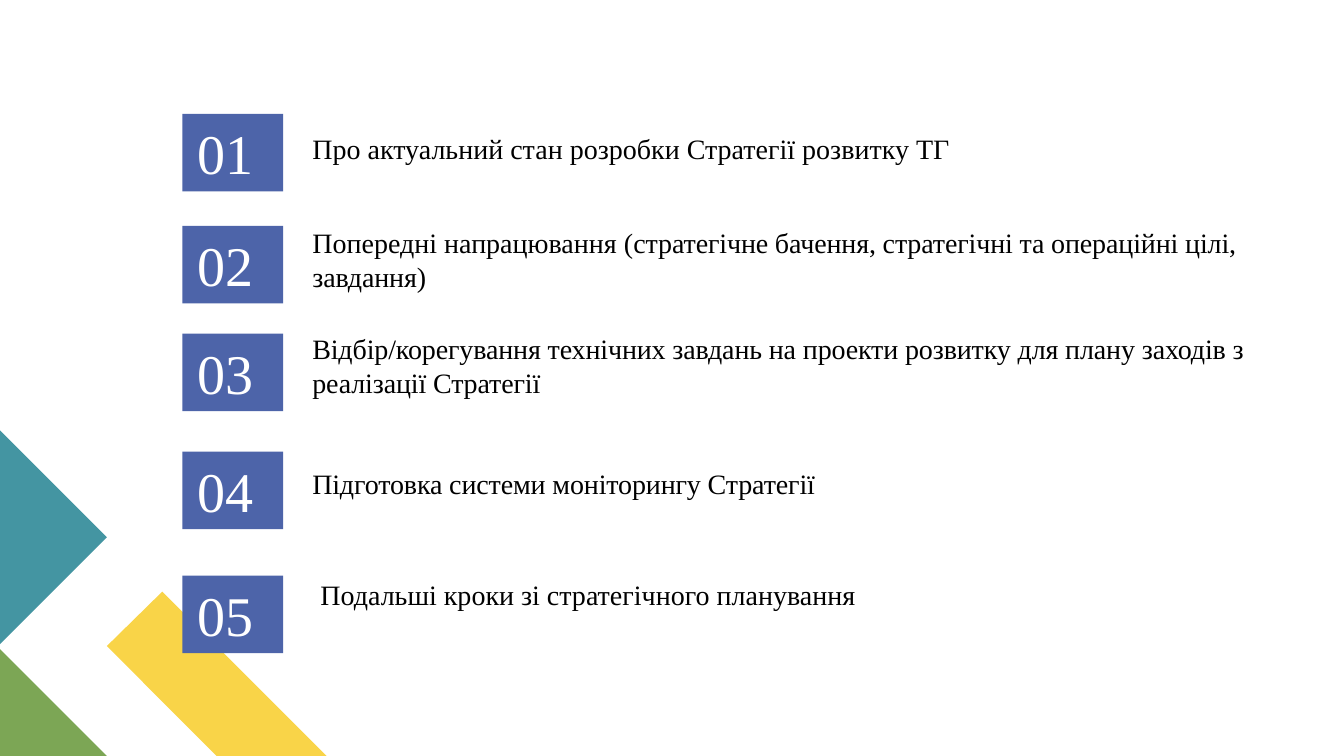
from pptx import Presentation
from pptx.dml.color import RGBColor
from pptx.enum.shapes import MSO_SHAPE
from pptx.enum.text import MSO_ANCHOR, PP_ALIGN
from pptx.util import Inches, Pt


def paint(fmt, tone):
    """Give a fill or font a solid colour from a hex string."""
    fmt.solid()
    fmt.fore_color.rgb = RGBColor.from_string(tone)


class Deck:
    """Hold the style and the slide, on a grid of tenth-inch cells."""

    cell = Inches(0.1)
    base = {"name": "Times New Roman"}
    frame = {"word_wrap": True, "vertical_anchor": MSO_ANCHOR.TOP}

    def __init__(self, cols, rows):
        """Start a deck with one blank slide."""
        self.file = Presentation()
        self.file.slide_width = self.grid(cols)
        self.file.slide_height = self.grid(rows)
        self.slide = self.file.slides.add_slide(self.file.slide_layouts[6])
        self.shapes = self.slide.shapes

    def grid(self, count):
        """Turn a count of cells into a length."""
        return round(count * self.cell)

    def style(self, item, *sets):
        """Set attributes from dicts of format values."""
        for values in sets:
            for key, value in values.items():
                setattr(item, key, value)

    def plain(self, shape, tone):
        """Fill a shape and drop its line and shadow."""
        paint(shape.fill, tone)
        shape.line.fill.background()
        shape.shadow.inherit = False

    def letter(self, shape, runs, tone, size, align):
        """Put runs of text and letter spacing into a shape."""
        self.style(shape.text_frame, self.frame)
        line = shape.text_frame.paragraphs[0]
        line.alignment = align
        for text, gap in runs:
            run = line.add_run()
            run.text = text
            self.style(run.font, self.base, {"size": Pt(size)})
            paint(run.font.fill, tone)
            if gap:
                run._r.get_or_add_rPr().set("spc", str(gap))

    def patch(self, points, tone):
        """Draw a filled polygon through grid points."""
        spots = [(self.grid(x), self.grid(y)) for x, y in points]
        form = self.shapes.build_freeform(*spots[0])
        form.add_line_segments(spots[1:], close=True)
        self.plain(form.convert_to_shape(), tone)

    def badge(self, text, *box):
        """Draw a numbered block."""
        shape = self.shapes.add_shape(MSO_SHAPE.RECTANGLE, *map(self.grid, box))
        self.plain(shape, "4D64A9")
        self.letter(shape, [(text, 0)], "FFFFFF", 40, PP_ALIGN.CENTER)

    def label(self, runs, *box):
        """Place the text of an agenda item."""
        shape = self.shapes.add_textbox(*map(self.grid, box))
        self.letter(shape, runs, "000000", 20, PP_ALIGN.LEFT)


PATCHES = [
    ("F9D448", [(32.4, 75), (21.5, 75), (10.6, 64.1), (16.1, 58.7)]),
    ("7CA655", [(10.6, 75), (0, 75), (0, 64.4)]),
    ("4495A2", [(0, 42.7), (10.6, 53.3), (0, 63.9)]),
]

TIGHT = -10
AGENDA = [
    (11.3, (30, 12.6, 79, 4.4),
     [("Про актуальний стан розробки Стратегії розвитку ТГ", 0)]),
    (22.4, (30, 21.9, 103.1, 7.7),
     [("Попередні напрацювання (", 0),
      ("стратегічне бачення, стратегічні та операційні цілі, завдання", TIGHT),
      (")", 0)]),
    (33.1, (30, 32.4, 103.1, 7.7),
     [("Відбір/корегування технічних завдань на проекти розвитку "
       "для плану заходів з реалізації Стратегії", TIGHT)]),
    (44.8, (30, 45.8, 100.7, 4.4),
     [("Підготовка системи моніторингу Стратегії", TIGHT)]),
    (57.1, (30.8, 56.8, 95.4, 4.4),
     [("Подальші кроки зі стратегічного планування", 0)]),
]


def main():
    """Build the agenda slide."""
    deck = Deck(133.33, 75)
    for tone, points in PATCHES:
        deck.patch(points, tone)
    for count, (top, box, runs) in enumerate(AGENDA, 1):
        deck.badge(f"{count:02d} ", 18.1, top, 10, 7.7)
        deck.label(runs, *box)
    deck.file.save("out.pptx")


if __name__ == "__main__":
    main()
